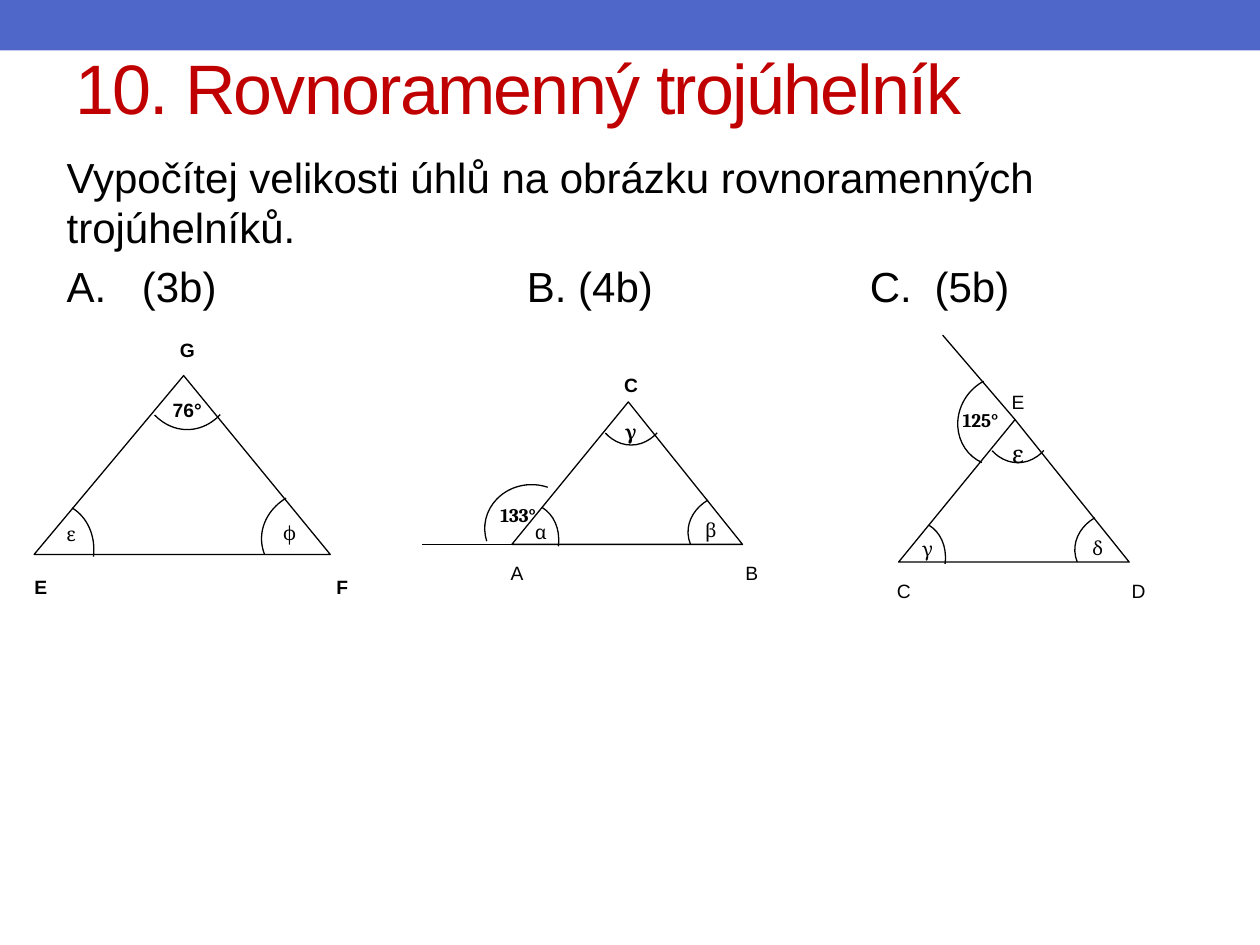
from dataclasses import dataclass

import pptx
import pptx.dml.color
import pptx.enum.shapes
import pptx.enum.text
import pptx.oxml.ns
import pptx.util
from lxml import etree

Pt = pptx.util.Pt
qn = pptx.oxml.ns.qn
SHAPE = pptx.enum.shapes.MSO_SHAPE


@dataclass(frozen=True)
class Theme:
    band: str = "4E67C8"
    heading: str = "C00000"
    ink: str = "000000"
    paper: str = "FFFFFF"
    sans: str = "Arial"
    serif: str = "Cambria"
    title_size: float = 40
    body_size: float = 24
    label_size: float = 11
    large_label_size: float = 14
    line_width: float = 0.75


THEME = Theme()


@dataclass(frozen=True)
class Box:
    left: float
    top: float
    width: float
    height: float

    def point(self, x, y):
        """Turn percentages of the box into a position on the slide."""
        return (Pt(self.left + self.width * x / 100),
                Pt(self.top + self.height * y / 100))

    def frame(self, x, y, width, height):
        """Turn percentages of the box into a position and a size."""
        return (*self.point(x, y), Pt(self.width * width / 100),
                Pt(self.height * height / 100))


@dataclass(frozen=True)
class Label:
    text: str
    font: str = THEME.sans
    bold: bool = False
    size: float = THEME.label_size


@dataclass(frozen=True)
class ExteriorAngle:
    """An extended side with its angle, in percentages of the triangle box."""
    text: str
    line_start: tuple
    line_end: tuple
    arc_corner: tuple
    arc_rotation: float
    label_corner: tuple


# Percentages of the triangle box, in the order left, right, top
VERTEX_CORNERS = ((-4.3, 109.8), (97.5, 109.8), (45.2, -22.8))
VERTEX_SIZE = (13.1, 22.3)
ANGLE_CORNERS = ((6, 80.4), (79.7, 79.6), (45.2, 10.6))
ANGLE_SIZE = (13.1, 19.3)
ARC_SIZE = (33.4, 65.5)
ARCS = (  # corner, rotation, start and end of the sweep
    ((-14.1, 69.3), 31.2, (162, 196.36)),
    ((79.9, 58), 267.3, (153.83, 193.36)),
    ((35, -35.3), 180, (139.77, 183.95)),
)
EXTERIOR_ARC_SIZE = (37.7, 65.5)
EXTERIOR_SWEEP = (153.83, 14.71)
EXTERIOR_LABEL_SIZE = (19.7, 19.5)


def rgb(value):
    return pptx.dml.color.RGBColor.from_string(value)


def set_font(paragraph, name, size, color, bold=False):
    font = paragraph.font
    font.name, font.size, font.bold = name, Pt(size), bold
    font.color.rgb = rgb(color)


def add_outline(shapes, kind, frame, adjustments, rotation=0, fill=None):
    shape = shapes.add_shape(kind, *frame)
    shape.shadow.inherit = False
    shape.rotation = rotation
    for index, value in enumerate(adjustments):
        shape.adjustments[index] = value
    if fill:
        shape.fill.solid()
        shape.fill.fore_color.rgb = rgb(fill)
    else:
        shape.fill.background()
    shape.line.color.rgb = rgb(THEME.ink)
    shape.line.width = Pt(THEME.line_width)


def add_label(shapes, frame, label):
    text_frame = shapes.add_textbox(*frame).text_frame
    text_frame.word_wrap = True
    text_frame.margin_left = text_frame.margin_right = 0
    text_frame.margin_top = text_frame.margin_bottom = 0
    paragraph = text_frame.paragraphs[0]
    paragraph.text = label.text
    paragraph.alignment = pptx.enum.text.PP_ALIGN.CENTER
    paragraph.line_spacing = 1.15
    paragraph.space_after = Pt(10)
    set_font(paragraph, label.font, label.size, THEME.ink, label.bold)


def add_exterior_angle(shapes, box, exterior):
    line = shapes.add_connector(
        pptx.enum.shapes.MSO_CONNECTOR.STRAIGHT,
        *box.point(*exterior.line_start), *box.point(*exterior.line_end))
    line.line.color.rgb = rgb(THEME.ink)
    line.line.width = Pt(THEME.line_width)
    etree.SubElement(line._element.spPr, qn("a:effectLst"))
    add_outline(shapes, SHAPE.ARC,
                box.frame(*exterior.arc_corner, *EXTERIOR_ARC_SIZE),
                EXTERIOR_SWEEP, exterior.arc_rotation)
    add_label(shapes, box.frame(*exterior.label_corner, *EXTERIOR_LABEL_SIZE),
              Label(exterior.text, THEME.serif, True))


def add_triangle(slide, box, vertices, angles, exterior=None):
    """Draw a triangle with labels given in the order left, right, top."""
    shapes = slide.shapes.add_group_shape().shapes
    add_outline(shapes, SHAPE.ISOSCELES_TRIANGLE, box.frame(0, 0, 100, 100),
                (0.505,), fill=THEME.paper)
    for corner, rotation, sweep in ARCS:
        add_outline(shapes, SHAPE.ARC, box.frame(*corner, *ARC_SIZE),
                    sweep, rotation)
    for corner, label in zip(VERTEX_CORNERS, vertices):
        add_label(shapes, box.frame(*corner, *VERTEX_SIZE), label)
    for corner, label in zip(ANGLE_CORNERS, angles):
        add_label(shapes, box.frame(*corner, *ANGLE_SIZE), label)
    if exterior:
        add_exterior_angle(shapes, box, exterior)


def add_band(slide, box):
    band = slide.shapes.add_shape(SHAPE.RECTANGLE, *box.frame(0, 0, 100, 100))
    band.shadow.inherit = False
    band.fill.solid()
    band.fill.fore_color.rgb = rgb(THEME.band)
    band.line.fill.background()


def add_title(slide, box, text):
    text_frame = slide.shapes.add_textbox(*box.frame(0, 0, 100, 100)).text_frame
    text_frame.word_wrap = True
    text_frame.vertical_anchor = pptx.enum.text.MSO_ANCHOR.MIDDLE
    paragraph = text_frame.paragraphs[0]
    paragraph.text = text
    set_font(paragraph, THEME.sans, THEME.title_size, THEME.heading)
    paragraph._p.pPr.find(qn("a:defRPr")).set("spc", "-100")


def add_task(slide, box, texts, tab_stops):
    text_frame = slide.shapes.add_textbox(*box.frame(0, 0, 100, 100)).text_frame
    text_frame.word_wrap = True
    for index, text in enumerate(texts):
        paragraph = text_frame.add_paragraph() if index else text_frame.paragraphs[0]
        paragraph.text = text
        paragraph.space_before = Pt(5)
        set_font(paragraph, THEME.sans, THEME.body_size, THEME.ink)
        tabs = etree.Element(qn("a:tabLst"))
        for stop in tab_stops:
            etree.SubElement(tabs, qn("a:tab"), pos=str(Pt(stop)), algn="l")
        paragraph._p.pPr.find(qn("a:defRPr")).addprevious(tabs)


def main():
    presentation = pptx.Presentation()
    presentation.slide_width, presentation.slide_height = Pt(720), Pt(540)
    slide = presentation.slides.add_slide(presentation.slide_layouts[6])
    add_band(slide, Box(0, 0, 720, 28.8))
    add_title(slide, Box(36, 21.6, 648, 55.4), "10. Rovnoramenný trojúhelník")
    add_task(slide, Box(31, 82.8, 648, 357),
             ("Vypočítej velikosti úhlů na obrázku rovnoramenných trojúhelníků.",
              "A.\t(3b)\tB. (4b)\tC.\t(5b)"), (43, 263, 459, 496))

    serif = THEME.serif
    add_triangle(slide, Box(19.5, 214.6, 169.2, 102.2),
                 [Label(name, bold=True) for name in "EFG"],
                 (Label("ε", serif), Label("ϕ", serif), Label("76°", bold=True)))
    add_triangle(slide, Box(292.5, 229.7, 131.8, 81.4),
                 (Label("A"), Label("B"), Label("C", bold=True)),
                 (Label("α", serif), Label("β", serif), Label("γ", serif, True)),
                 ExteriorAngle("133°", (8.7, 100), (-38.8, 100),
                               (-10.4, 55.8), 267.3, (-7.1, 69)))
    add_triangle(slide, Box(513.5, 239.8, 131.8, 81.4),
                 [Label(name) for name in "CDE"],
                 (Label("γ", serif), Label("δ", serif),
                  Label("ε", serif, size=THEME.large_label_size)),
                 ExteriorAngle("125°", (50.5, 0), (19.1, -59.3),
                               (26.2, -31.9), 220, (25.7, -10.6)))
    presentation.save("out.pptx")


if __name__ == "__main__":
    main()
